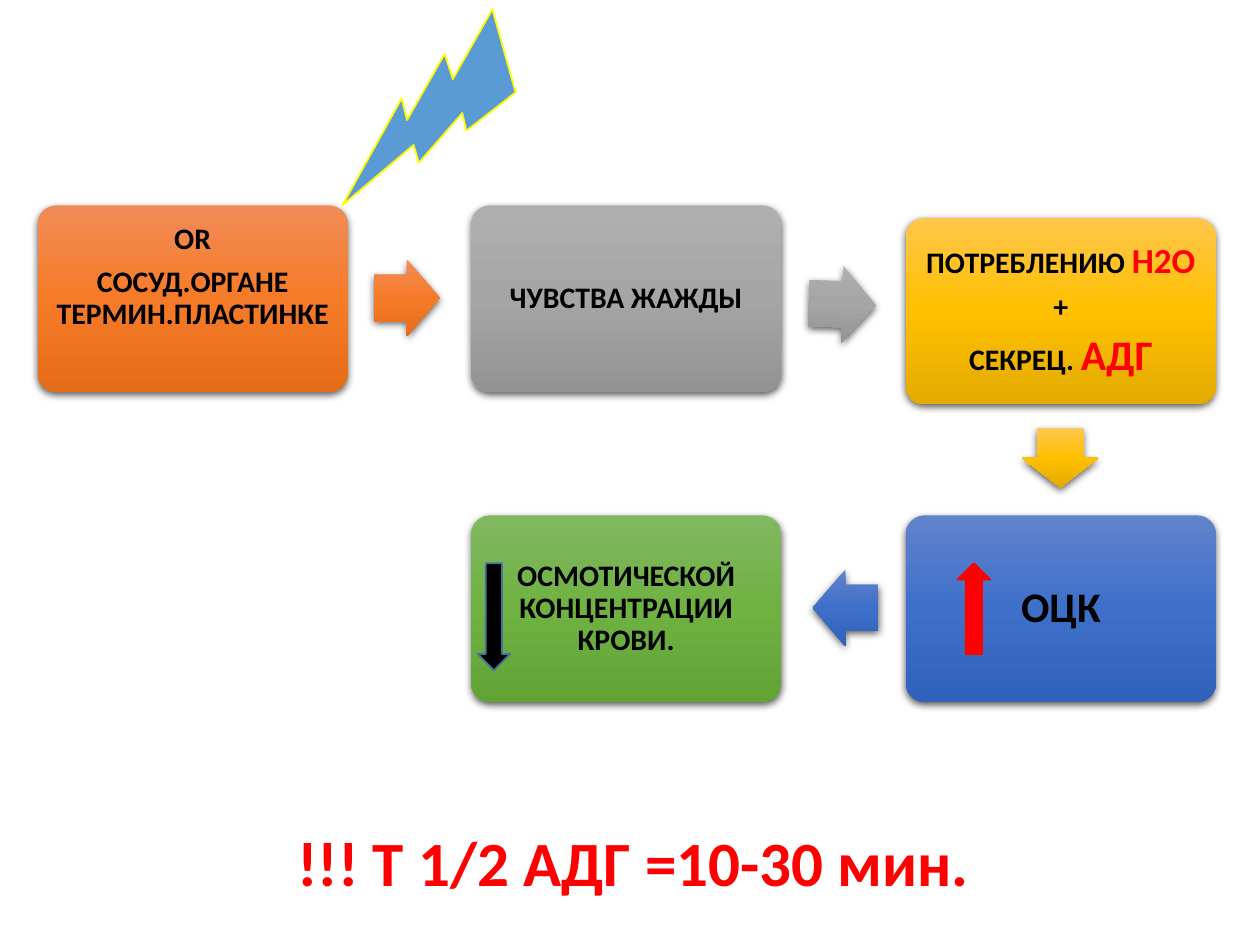
from copy import deepcopy
from dataclasses import dataclass

from lxml.etree import SubElement
from pptx import Presentation
from pptx.dml.color import RGBColor
from pptx.enum.shapes import MSO_SHAPE as Shape
from pptx.enum.text import MSO_ANCHOR as Anchor, PP_ALIGN as Align
from pptx.oxml.ns import qn
from pptx.util import Inches, Pt


@dataclass(frozen=True)
class Theme:
    """Colours, gradients and type sizes of the slide."""
    font: str = "Calibri"
    black: str = "000000"
    red: str = "FF0000"
    yellow: str = "FFFF00"
    sky: str = "5B9BD5"
    navy: str = "43739E"
    orange: tuple = ("F18C57", "F67B28", "E56C19")
    grey: tuple = ("AFAFAF", "A5A5A5", "939393")
    gold: tuple = ("FFC64B", "FFC000", "E3AB00")
    blue: tuple = ("6183CB", "3E70CA", "3062BB")
    green: tuple = ("81B861", "6FB242", "62A336")
    body: int = 17
    formula: int = 20
    large: int = 24
    note: int = 36


class SlideBuilder:
    """Draws the elements of one slide in one theme."""

    def __init__(self, slide, theme):
        self.slide, self.theme = slide, theme

    def shape(self, kind, box, rotation=0, adjustments=()):
        """Add a preset shape without effects."""
        shape = self.slide.shapes.add_shape(kind, *map(Inches, box))
        shape.rotation = rotation
        shape.shadow.inherit = False
        for index, value in enumerate(adjustments):
            shape.adjustments[index] = value
        return shape

    def flat(self, kind, box, fill, line, rotation=0):
        """Add a shape with a plain fill and a thin outline."""
        shape = self.shape(kind, box, rotation)
        shape.fill.solid()
        shape.fill.fore_color.rgb = RGBColor.from_string(fill)
        shape.line.color.rgb = RGBColor.from_string(line)
        shape.line.width = Pt(1)

    def glossy(self, kind, box, colours, adjustments, rotation=0):
        """Add a shape with a vertical three-colour gradient and a shadow."""
        shape = self.shape(kind, box, rotation, adjustments)
        shape.fill.gradient()
        shape.fill.gradient_angle = 270
        properties = shape._element.spPr
        stop_list = properties.find(qn("a:gradFill")).find(qn("a:gsLst"))
        stop_list.append(deepcopy(stop_list[-1]))
        for stop, colour, position in zip(shape.fill.gradient_stops, colours, (0, 0.5, 1)):
            stop.color.rgb = RGBColor.from_string(colour)
            stop.position = position
        shape.line.fill.background()
        shadow = SubElement(properties.find(qn("a:effectLst")), qn("a:outerShdw"),
                            blurRad=str(Pt(4.5)), dist=str(Pt(1.5)), dir="5400000",
                            algn="ctr", rotWithShape="0")
        colour = SubElement(shadow, qn("a:srgbClr"), val=self.theme.black)
        SubElement(colour, qn("a:alpha"), val="63000")
        return shape

    def step(self, left, top, colours, paragraphs, bottom=0.07):
        """Add a rounded step box with centred text."""
        shape = self.glossy(Shape.ROUNDED_RECTANGLE, (left, top, 2.46, 1.48), colours, (0.1,))
        inset = Inches(0.07)
        self.text(shape.text_frame, paragraphs,
                  {"word_wrap": True, "vertical_anchor": Anchor.MIDDLE,
                   "margin_left": inset, "margin_right": inset,
                   "margin_top": inset, "margin_bottom": Inches(bottom)},
                  {"alignment": Align.CENTER, "line_spacing": 0.9, "space_after": Pt(6)})

    def arrow(self, kind, box, colours, rotation=0):
        """Add a block arrow between two steps."""
        self.glossy(kind, box, colours, (0.6, 0.5), rotation)

    def note(self, box, run):
        """Add a large line of text."""
        frame = self.slide.shapes.add_textbox(*map(Inches, box)).text_frame
        self.text(frame, [[run]], {"word_wrap": True}, {"alignment": Align.LEFT})

    def text(self, frame, paragraphs, frame_format, paragraph_format):
        """Fill a text frame with paragraphs of (text, size, colour) runs."""
        self.apply(frame, frame_format)
        for index, runs in enumerate(paragraphs):
            paragraph = frame.add_paragraph() if index else frame.paragraphs[0]
            self.apply(paragraph, paragraph_format)
            for text, size, colour in runs:
                run = paragraph.add_run()
                run.text = text
                self.apply(run.font, {"name": self.theme.font, "size": Pt(size), "bold": True})
                run.font.color.rgb = RGBColor.from_string(colour)

    @staticmethod
    def apply(target, values):
        """Set attributes from a dict of format values."""
        for name, value in values.items():
            setattr(target, name, value)


def main():
    """Build the slide and save it."""
    presentation = Presentation()
    presentation.slide_width, presentation.slide_height = Inches(10), Inches(7.5)
    theme = Theme()
    builder = SlideBuilder(presentation.slides.add_slide(presentation.slide_layouts[6]), theme)

    def plain(text, size=theme.body):
        return text, size, theme.black

    def accent(text, size):
        return text, size, theme.red

    first, second, third = 0.3, 3.74, 7.19
    upper, lower = 1.63, 4.09
    builder.step(first, upper, theme.orange,
                 [[plain("ОR")], [plain("СОСУД.ОРГАНЕ ТЕРМИН.ПЛАСТИНКЕ")]], bottom=0.41)
    builder.arrow(Shape.RIGHT_ARROW, (2.97, 2.06, 0.52, 0.61), theme.orange)
    builder.step(second, upper, theme.grey, [[plain("ЧУВСТВА ЖАЖДЫ")]])
    builder.arrow(Shape.RIGHT_ARROW, (6.42, 2.11, 0.53, 0.61), theme.grey, rotation=1.7)
    builder.step(third, upper + 0.1, theme.gold,
                 [[plain("ПОТРЕБЛЕНИЮ "), accent("H2O", theme.formula)],
                  [plain("+")],
                  [plain("СЕКРЕЦ. "), accent("АДГ", theme.large)]])
    builder.arrow(Shape.DOWN_ARROW, (8.11, 3.4, 0.61, 0.47), theme.gold)
    builder.step(third, lower, theme.blue, [[plain("ОЦК", theme.large)]])
    builder.arrow(Shape.LEFT_ARROW, (6.45, 4.52, 0.52, 0.61), theme.blue)
    builder.step(second, lower, theme.green, [[plain("ОСМОТИЧЕСКОЙ КОНЦЕНТРАЦИИ КРОВИ.")]])

    builder.flat(Shape.LIGHTNING_BOLT, (2.61, 0.21, 1.64, 1.3), theme.sky, theme.yellow, 94.4)
    builder.flat(Shape.UP_ARROW, (7.6, 4.47, 0.26, 0.72), theme.red, theme.red)
    builder.flat(Shape.DOWN_ARROW, (3.79, 4.47, 0.26, 0.85), theme.black, theme.navy)
    builder.note((2.26, 6.49, 6.22, 0.71), accent("!!! T 1/2 АДГ =10-30 мин.", theme.note))
    presentation.save("out.pptx")


if __name__ == "__main__":
    main()
